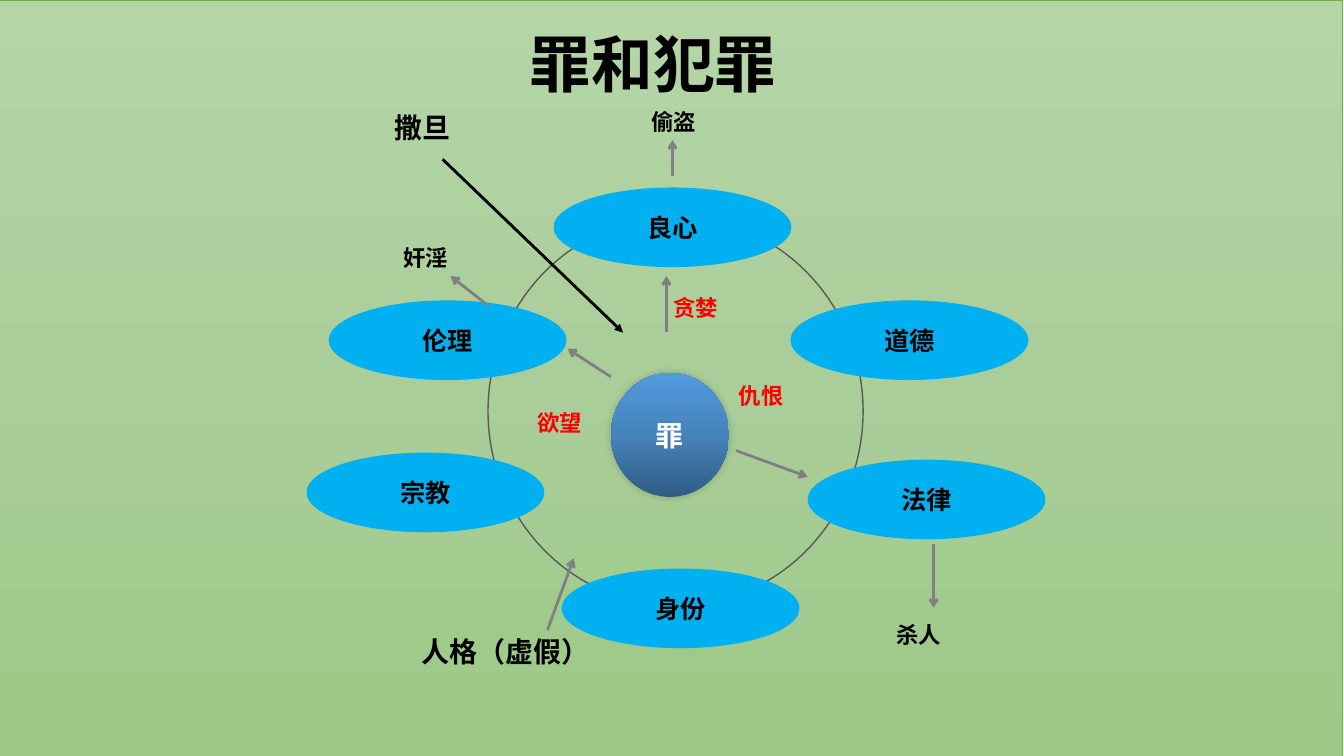
from copy import deepcopy

from lxml import etree
from pptx import Presentation
from pptx.dml.color import RGBColor
from pptx.enum.shapes import MSO_CONNECTOR, MSO_SHAPE
from pptx.enum.text import MSO_ANCHOR, PP_ALIGN
from pptx.oxml import parse_xml
from pptx.oxml.ns import nsdecls, qn
from pptx.util import Inches, Pt

RECT, OVAL = MSO_SHAPE.RECTANGLE, MSO_SHAPE.OVAL
STRAIGHT = MSO_CONNECTOR.STRAIGHT
LEFT, CENTER = PP_ALIGN.LEFT, PP_ALIGN.CENTER
TOP, MIDDLE = MSO_ANCHOR.TOP, MSO_ANCHOR.MIDDLE

BLACK = RGBColor(0x00, 0x00, 0x00)
WHITE = RGBColor(0xFF, 0xFF, 0xFF)
RED = RGBColor(0xFF, 0x00, 0x00)
GRAY = RGBColor(0x80, 0x80, 0x80)
RING = RGBColor(0x59, 0x59, 0x59)
SKY = RGBColor(0x00, 0xB0, 0xF0)
GREEN = RGBColor(0x70, 0xAD, 0x47)
GREENS = [RGBColor(0xB5, 0xD5, 0xA7), RGBColor(0xAA, 0xCE, 0x9A), RGBColor(0x9C, 0xC9, 0x87)]
BLUES = [RGBColor(0x30, 0x5C, 0x84), RGBColor(0x45, 0x83, 0xBB), RGBColor(0x52, 0x9B, 0xDE)]


def write(tf, text, size=16, color=BLACK, align=LEFT, anchor=TOP, font="Arial"):
    tf.word_wrap = True
    tf.vertical_anchor = anchor
    p = tf.paragraphs[0]
    p.alignment = align
    r = p.add_run()
    r.text = text
    r.font.name, r.font.size, r.font.bold = font, Pt(size), True
    r.font.color.rgb = color


class Board:
    """Holds the slide and draws each kind of element on it."""

    def __init__(self, slide):
        self.slide = slide

    def shape(self, kind, x, y, w, h, fill=None, line=None, line_width=1):
        sp = self.slide.shapes.add_shape(kind, Inches(x), Inches(y), Inches(w), Inches(h))
        sp.shadow.inherit = False
        if fill is None:
            sp.fill.background()
        elif isinstance(fill, list):
            self.gradient(sp, fill)
        else:
            sp.fill.solid()
            sp.fill.fore_color.rgb = fill
        if line is None:
            sp.line.fill.background()
        else:
            sp.line.color.rgb = line
            sp.line.width = Pt(line_width)
        return sp

    def gradient(self, sp, colors, angle=270):
        sp.fill.gradient()
        sp.fill.gradient_angle = angle
        first = next(sp.element.spPr.iter(qn("a:gs")))
        first.addnext(deepcopy(first))
        for i, (stop, color) in enumerate(zip(sp.fill.gradient_stops, colors)):
            stop.color.rgb = color
            stop.position = i / (len(colors) - 1)

    def soft_shadow(self, sp, blur=6, opacity=20):
        effects = sp.element.spPr.find(qn("a:effectLst"))
        effects.append(parse_xml(
            f'<a:outerShdw {nsdecls("a")} blurRad="{Pt(blur)}" dist="0" dir="18900000">'
            f'<a:srgbClr val="000000"><a:alpha val="{opacity * 1000}"/></a:srgbClr>'
            '</a:outerShdw>'))

    def label(self, text, x, y, w, h=0.37, **style):
        tb = self.slide.shapes.add_textbox(Inches(x), Inches(y), Inches(w), Inches(h))
        write(tb.text_frame, text, **style)

    def oval(self, text, x, y, w=2.36, h=0.79, fill=SKY, size=18, color=BLACK):
        sp = self.shape(OVAL, x, y, w, h, fill)
        write(sp.text_frame, text, size, color, CENTER, MIDDLE)
        return sp

    def arrow(self, x1, y1, x2, y2, color=GRAY, head="arrow"):
        c = self.slide.shapes.add_connector(
            STRAIGHT, Inches(x1), Inches(y1), Inches(x2), Inches(y2))
        c.line.color.rgb = color
        c.line.width = Pt(2)
        etree.SubElement(c.line._get_or_add_ln(), qn("a:tailEnd"), type=head)
        etree.SubElement(c.element.spPr, qn("a:effectLst"))


def main():
    prs = Presentation()
    prs.slide_width, prs.slide_height = Inches(13.33), Inches(7.5)
    s = Board(prs.slides.add_slide(prs.slide_layouts[6]))

    # Backdrop, ring and title
    s.shape(RECT, -0.02, 0, 13.33, 7.5, GREENS, GREEN, 0.5)
    s.shape(OVAL, 4.84, 2.15, 3.72, 3.86, line=RING)
    s.label("罪和犯罪", 3.91, 0.21, 5.14, 0.84, size=44, align=CENTER)

    # Ovals around the ring
    for text, x, y in [("伦理", 3.26, 2.98), ("宗教", 3.04, 4.49), ("身份", 5.57, 5.64),
                       ("法律", 8.01, 4.56), ("道德", 7.84, 2.98), ("良心", 5.49, 1.86)]:
        s.oval(text, x, y)

    # Centre
    core = s.oval("罪", 6.06, 3.7, 1.17, 1.23, fill=BLUES, size=20, color=WHITE)
    core.fill.gradient_angle = 90
    s.soft_shadow(core)

    # Inner desires
    for text, x, y in [("仇恨", 7.23, 3.74), ("欲望", 5.23, 4.01), ("贪婪", 6.58, 2.87)]:
        s.label(text, x, y, 1.05, color=RED)

    # Outer labels
    s.label("偷盗", 6.36, 1.02, 2.69)
    s.label("杀人", 8.79, 6.11, 1.09)
    s.label("奸淫", 3.32, 2.37, 1.81, align=CENTER)
    s.label("撒旦", 2.81, 1.05, 2.76, 0.44, size=20, align=CENTER)
    s.label("人格（虚假）", 4.08, 6.25, 2.1, 0.44, size=20)

    # Arrows
    s.arrow(4.39, 1.58, 6.18, 3.3, BLACK, "triangle")
    for ends in [(7.3, 4.47, 8.01, 4.73), (6.06, 3.74, 5.63, 3.46),
                 (4.84, 3.03, 4.47, 2.74), (6.61, 3.29, 6.61, 2.74),
                 (6.67, 1.75, 6.67, 1.39), (9.26, 5.4, 9.26, 6.03),
                 (5.43, 6.25, 5.69, 5.54)]:
        s.arrow(*ends)

    prs.save("out.pptx")


if __name__ == "__main__":
    main()
